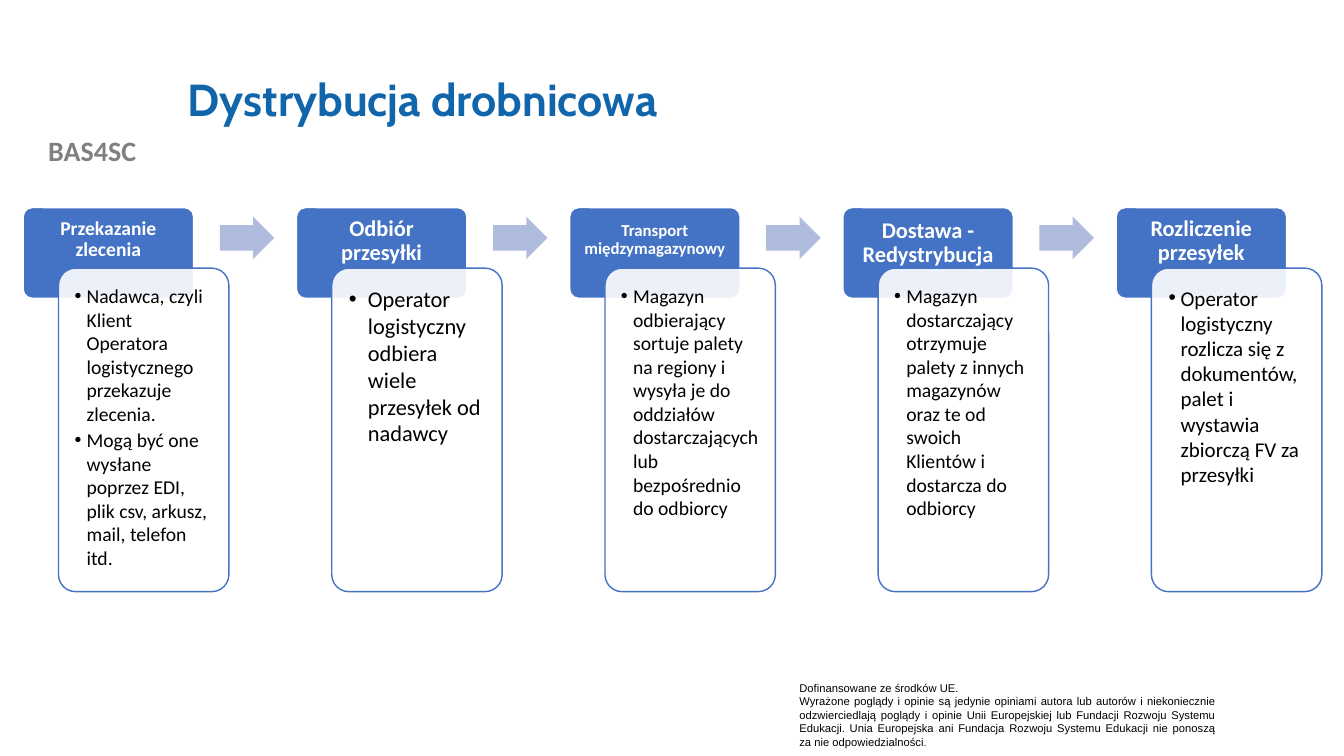
from lxml import etree
from pptx import Presentation
from pptx.dml.color import RGBColor
from pptx.enum import shapes, text
from pptx.oxml import ns
from pptx.util import Inches, Pt

HUES = {
    "title": "1065AB", "brand": "808080", "blue": "4472C4",
    "arrow": "B0BCDE", "white": "FFFFFF", "black": "000000",
}
LEFT, PITCH = 0.23, 2.71

# head, head size, head padding, head anchor, body, body size, body padding, indent
STEPS = [
    ("Przekazanie zlecenia", 14, 0.11, "TOP",
     ["Nadawca, czyli Klient Operatora logistycznego przekazuje zlecenia.",
      "Mogą być one wysłane poprzez EDI, plik csv, arkusz, mail, telefon itd."],
     14, 0.11, 0.12),
    ("Odbiór przesyłki", 16, 0.12, "MIDDLE",
     ["Operator logistyczny odbiera wiele przesyłek od nadawcy"],
     16, 0.12, 0.19),
    ("Transport międzymagazynowy", 12, 0.09, "MIDDLE",
     ["Magazyn odbierający sortuje palety na regiony i wysyła je do oddziałów "
      "dostarczających lub bezpośrednio do odbiorcy"],
     14, 0.11, 0.12),
    ("Dostawa - Redystrybucja", 16, 0.12, "TOP",
     ["Magazyn dostarczający otrzymuje palety z innych magazynów oraz te od "
      "swoich Klientów i dostarcza do odbiorcy"],
     14, 0.11, 0.12),
    ("Rozliczenie przesyłek", 16, 0.12, "MIDDLE",
     ["Operator logistyczny rozlicza się z dokumentów, palet i wystawia "
      "zbiorczą FV za przesyłki"],
     15, 0.12, 0.12),
]
NOTE = [
    "Dofinansowane ze środków UE.",
    "Wyrażone poglądy i opinie są jedynie opiniami autora lub autorów i "
    "niekoniecznie odzwierciedlają poglądy i opinie Unii Europejskiej lub "
    "Fundacji Rozwoju Systemu Edukacji. Unia Europejska ani Fundacja Rozwoju "
    "Systemu Edukacji nie ponoszą za nie odpowiedzialności",
]


def hue(name):
    return RGBColor.from_string(HUES[name])


def style(run, size, face, color, bold=False):
    font = run.font
    font.size, font.name, font.bold = Pt(size), face, bold
    font.color.rgb = hue(color)


def write(frame, lines, size, face, color, bold=False, align="LEFT"):
    frame.word_wrap = True
    frame.text = "\n".join(lines)
    for para in frame.paragraphs:
        para.alignment = getattr(text.PP_ALIGN, align)
        for run in para.runs:
            style(run, size, face, color, bold)


def pad(frame, left, top, right, base):
    frame.margin_left, frame.margin_top = Inches(left), Inches(top)
    frame.margin_right, frame.margin_bottom = Inches(right), Inches(base)


def shape(slide, kind, box, fill, line=None, adjust=(0.1,)):
    item = slide.shapes.add_shape(kind, *map(Inches, box))
    item.shadow.inherit = False
    for spot, value in enumerate(adjust):
        item.adjustments[spot] = value
    item.fill.solid()
    item.fill.fore_color.rgb = hue(fill)
    if line:
        item.line.color.rgb = hue(line)
        item.line.width = Pt(1)
    else:
        item.line.fill.background()
    return item


def fade(item, share):
    tone = item.fill._xPr.find(ns.qn("a:solidFill"))[0]
    etree.SubElement(tone, ns.qn("a:alpha")).set("val", str(share * 1000))


def bullet(para, indent):
    props = para._p.get_or_add_pPr()
    props.set("marL", str(Inches(indent)))
    props.set("indent", str(-Inches(indent)))
    etree.SubElement(props, ns.qn("a:buFont")).set("typeface", "Arial")
    etree.SubElement(props, ns.qn("a:buChar")).set("char", "•")


def head(slide, left, label, size, gap, anchor):
    item = shape(slide, shapes.MSO_SHAPE.ROUNDED_RECTANGLE,
                 (left, 2.06, 1.69, 0.9), "blue", "white")
    frame = item.text_frame
    side = gap - 0.03
    pad(frame, side, side, side, gap / 2 + 0.27)
    frame.vertical_anchor = getattr(text.MSO_ANCHOR, anchor)
    write(frame, [label], size, "Calibri", "white", True, "CENTER")
    frame.paragraphs[0].line_spacing = 0.9


def card(slide, left, lines, size, gap, indent):
    item = shape(slide, shapes.MSO_SHAPE.ROUNDED_RECTANGLE,
                 (left, 2.66, 1.69, 3.21), "white", "blue")
    fade(item, 90)
    frame = item.text_frame
    pad(frame, gap, gap, gap, gap)
    frame.vertical_anchor = text.MSO_ANCHOR.TOP
    write(frame, lines, size, "Calibri", "black")
    for para in frame.paragraphs:
        para.space_after = Pt(2)
        bullet(para, indent)


def arrow(slide, left):
    shape(slide, shapes.MSO_SHAPE.RIGHT_ARROW, (left, 2.15, 0.54, 0.42),
          "arrow", adjust=(0.6, 0.5))


def label(slide, box, *args):
    frame = slide.shapes.add_textbox(*map(Inches, box)).text_frame
    write(frame, *args)
    return frame


def title(slide, words):
    item = slide.shapes.title
    item.left, item.top = Inches(1.76), Inches(0.4)
    item.width, item.height = Inches(10.66), Inches(1.22)
    frame = item.text_frame
    write(frame, [words], 32, "Cabin", "title", True)
    frame.vertical_anchor = text.MSO_ANCHOR.MIDDLE
    frame.paragraphs[0].line_spacing = 0.9


def main():
    deck = Presentation()
    deck.slide_width, deck.slide_height = Inches(13.33), Inches(7.5)
    slide = deck.slides.add_slide(deck.slide_layouts[5])
    label(slide, (0, 1.28, 1.83, 0.44), ["BAS4SC"],
          20, "Calibri", "brand", True, "CENTER")
    note = label(slide, (7.83, 6.71, 4.33, 0.77), NOTE,
                 8, "Arial", "black", False, "JUSTIFY")
    stop = note.paragraphs[-1].add_run()
    stop.text = "."
    style(stop, 7, "Arial", "black")
    title(slide, "Dystrybucja drobnicowa")
    for spot, (name, size, gap, anchor, *body) in enumerate(STEPS):
        left = LEFT + spot * PITCH
        head(slide, left, name, size, gap, anchor)
        card(slide, left + 0.35, *body)
        if spot < len(STEPS) - 1:
            arrow(slide, left + 1.95)
    deck.save("out.pptx")


if __name__ == "__main__":
    main()
